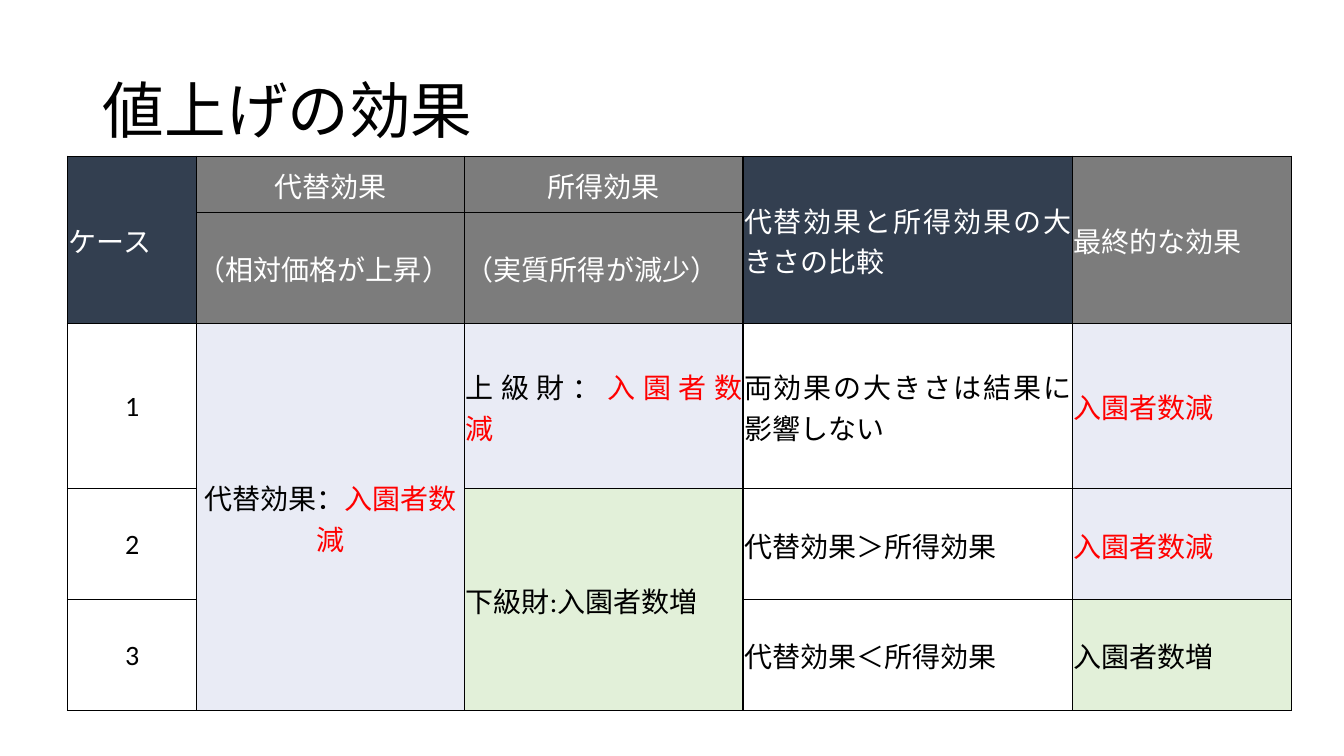
from pptx import Presentation
from pptx.dml.color import RGBColor
from pptx.enum.text import MSO_ANCHOR, PP_ALIGN
from pptx.oxml import parse_xml
from pptx.oxml.ns import nsdecls
from pptx.util import Inches, Pt

HUES = {"navy": "333F50", "gray": "7C7C7C", "lilac": "E9EBF5", "green": "E2F0D9",
        "white": "FFFFFF", "black": "000000", "red": "FF0000"}
FONT = "Calibri"
TITLE = "値上げの効果"
COLS = [1.28, 2.66, 2.76, 3.27, 2.17]
ROWS = [0.56, 1.1, 1.64, 1.1, 1.1]
MID, JUST = PP_ALIGN.CENTER, PP_ALIGN.JUSTIFY

# row, column, rows spanned, fill, alignment, runs
CELLS = [
    (0, 0, 2, "navy", JUST, [("ケース", "white")]),
    (0, 1, 1, "gray", MID, [("代替効果", "white")]),
    (0, 2, 1, "gray", MID, [("所得効果", "white")]),
    (0, 3, 2, "navy", JUST, [("代替効果と所得効果の大きさの比較", "white")]),
    (0, 4, 2, "gray", JUST, [("最終的な効果", "white")]),
    (1, 1, 1, "gray", JUST, [("（相対価格が上昇）", "white")]),
    (1, 2, 1, "gray", JUST, [("（実質所得が減少）", "white")]),
    (2, 0, 1, "white", MID, [("1", "black")]),
    (2, 1, 3, "lilac", MID, [("代替効果：", "black"), ("入園者数減", "red")]),
    (2, 2, 1, "lilac", JUST, [("上級財：", "black"), ("入園者数減　", "red")]),
    (2, 3, 1, "white", JUST, [("両効果の大きさは結果に影響しない", "black")]),
    (2, 4, 1, "lilac", JUST, [("入園者数減", "red")]),
    (3, 0, 1, "white", MID, [("2", "black")]),
    (3, 2, 2, "green", JUST, [("下級財:入園者数増", "black")]),
    (3, 3, 1, "white", JUST, [("代替効果＞所得効果", "black")]),
    (3, 4, 1, "lilac", JUST, [("入園者数減", "red")]),
    (4, 0, 1, "white", MID, [("3", "black")]),
    (4, 3, 1, "white", JUST, [("代替効果＜所得効果", "black")]),
    (4, 4, 1, "green", JUST, [("入園者数増", "black")]),
]


def color(name):
    return RGBColor.from_string(HUES[name])


def frame(cell):
    props = cell._tc.get_or_add_tcPr()
    for n, side in enumerate(("lnL", "lnR", "lnT", "lnB")):
        props.insert(n, parse_xml(
            f'<a:{side} {nsdecls("a")} w="{Pt(1)}"><a:solidFill>'
            f'<a:srgbClr val="{HUES["black"]}"/></a:solidFill></a:{side}>'))


def write(cell, align, runs):
    cell.vertical_anchor = MSO_ANCHOR.MIDDLE
    cell.margin_left = cell.margin_right = cell.margin_top = Inches(0.01)
    cell.margin_bottom = 0
    para = cell.text_frame.paragraphs[0]
    para.alignment = align
    para.font.size, para.font.name = Pt(20), FONT
    for text, hue in runs:
        run = para.add_run()
        run.text = text
        run.font.size, run.font.name = Pt(20), FONT
        run.font.color.rgb = color(hue)


deck = Presentation()
deck.slide_width, deck.slide_height = Inches(13.33), Inches(7.5)
slide = deck.slides.add_slide(deck.slide_layouts[5])

title = slide.shapes.title
title.left, title.top, title.width, title.height = map(Inches, (0.92, 0.4, 11.5, 1.45))
title.text_frame.text = TITLE
title.text_frame.vertical_anchor = MSO_ANCHOR.MIDDLE
head = title.text_frame.paragraphs[0]
head.alignment, head.line_spacing = PP_ALIGN.LEFT, 0.9
head.font.size, head.font.name = Pt(44), FONT
head.font.color.rgb = color("black")

table = slide.shapes.add_table(len(ROWS), len(COLS), Inches(0.67), Inches(1.55),
                               Inches(sum(COLS)), Inches(sum(ROWS))).table
table.first_row = table.horz_banding = False
for col, width in zip(table.columns, COLS):
    col.width = Inches(width)
for row, height in zip(table.rows, ROWS):
    row.height = Inches(height)

for top, left, span, fill, align, runs in CELLS:
    for r in range(top, top + span):
        part = table.cell(r, left)
        part.fill.solid()
        part.fill.fore_color.rgb = color(fill)
        frame(part)
    cell = table.cell(top, left)
    if span > 1:
        cell.merge(table.cell(top + span - 1, left))
    write(cell, align, runs)

table.cell(0, 0)._tc.get_or_add_tcPr().set("vert", "eaVert")
deck.save("out.pptx")
